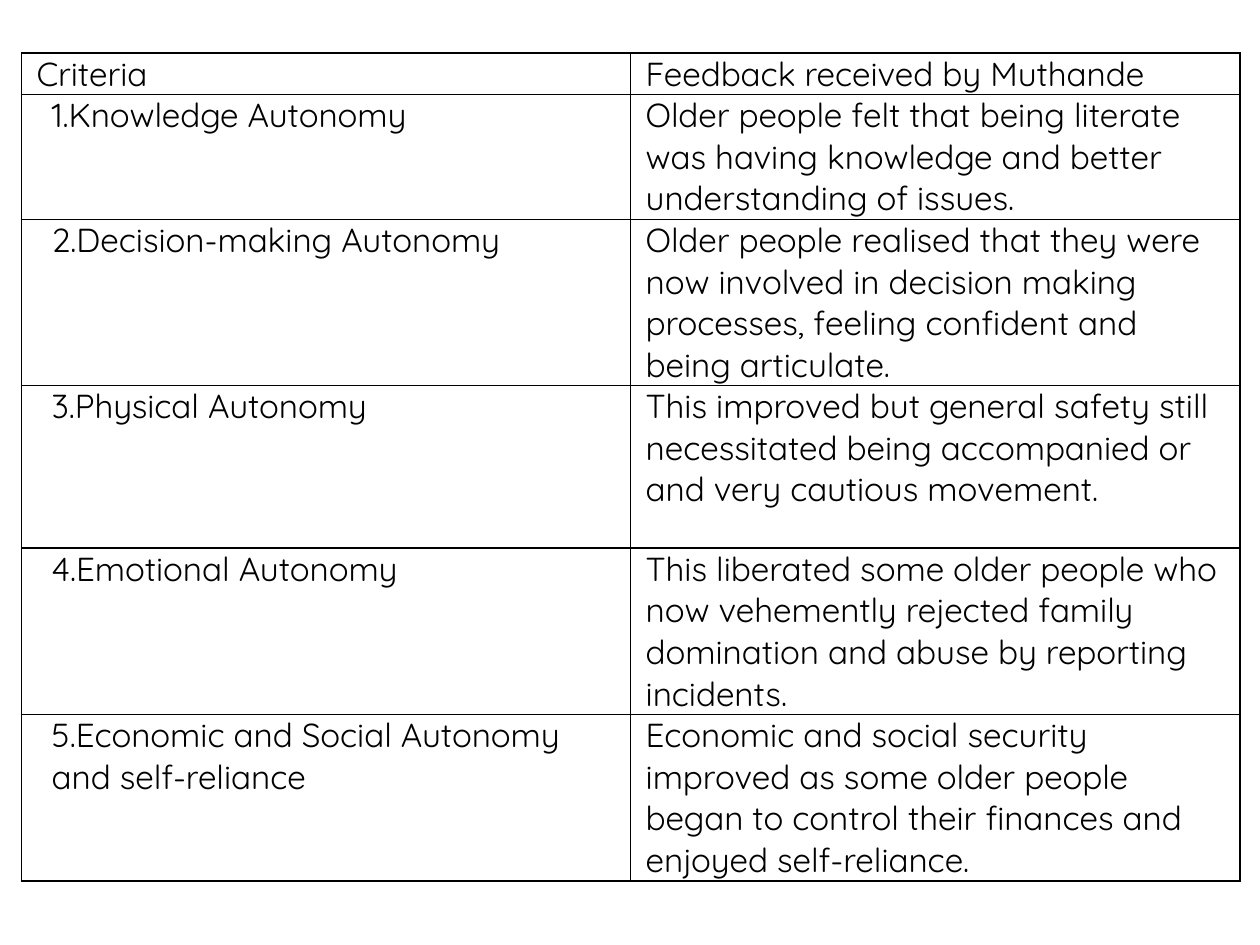
from lxml import etree
from pptx import Presentation
from pptx.dml.color import RGBColor
from pptx.oxml import ns
from pptx.util import Inches, Pt

BLACK = RGBColor(0, 0, 0)
FONT = "Quicksand"
HEADER = ("Criteria", "Feedback received by Muthande")
FEEDBACK = [
    ("1.Knowledge Autonomy",
     "Older people felt that being literate was having knowledge and better "
     "understanding of issues."),
    ("2.Decision-making Autonomy",
     "Older people realised that they were now involved in decision making "
     "processes, feeling confident and being articulate."),
    ("3.Physical Autonomy",
     "This improved but general safety still necessitated being accompanied or "
     "and very cautious movement."),
    ("4.Emotional Autonomy",
     "This liberated some older people who now vehemently rejected family "
     "domination and abuse by reporting incidents."),
    ("5.Economic and Social Autonomy and self-reliance",
     "Economic and social security improved as some older people began to "
     "control their finances and enjoyed self-reliance."),
]
ROW_HEIGHTS = [0.32, 0.97] + [1.29] * 4
LEFT, TOP, WIDTH = 0.17, 0.42, 9.67


def add_borders(cell, color, width):
    properties = cell._tc.get_or_add_tcPr()
    for position, side in enumerate(("lnL", "lnR", "lnT", "lnB")):
        line = etree.Element(ns.qn(f"a:{side}"), w=str(Pt(width)))
        fill = etree.SubElement(line, ns.qn("a:solidFill"))
        etree.SubElement(fill, ns.qn("a:srgbClr"), val=str(color))
        properties.insert(position, line)


def write_cell(cell, content, size=19, color=BLACK, indent=0):
    cell.margin_left = cell.margin_right = Inches(0.12)
    cell.margin_top = cell.margin_bottom = 0
    cell.fill.background()
    add_borders(cell, color, 1)
    para = cell.text_frame.paragraphs[0]
    if indent:
        para._p.get_or_add_pPr().set("marL", str(Inches(indent)))
    span = para.add_run()
    span.text = content
    span.font.name = FONT
    span.font.size = Pt(size)
    span.font.color.rgb = color


def main():
    deck = Presentation()
    deck.slide_width, deck.slide_height = Inches(10), Inches(7.5)
    page = deck.slides.add_slide(deck.slide_layouts[6])
    rows = [HEADER] + FEEDBACK
    table = page.shapes.add_table(
        len(rows), len(HEADER), Inches(LEFT), Inches(TOP),
        Inches(WIDTH), Inches(sum(ROW_HEIGHTS))).table
    table.first_row = table.horz_banding = False
    for row, height in zip(table.rows, ROW_HEIGHTS):
        row.height = Inches(height)
    for r, contents in enumerate(rows):
        for c, content in enumerate(contents):
            indent = 0.12 if r > 0 and c == 0 else 0
            write_cell(table.cell(r, c), content, indent=indent)
    deck.save("out.pptx")


if __name__ == "__main__":
    main()
